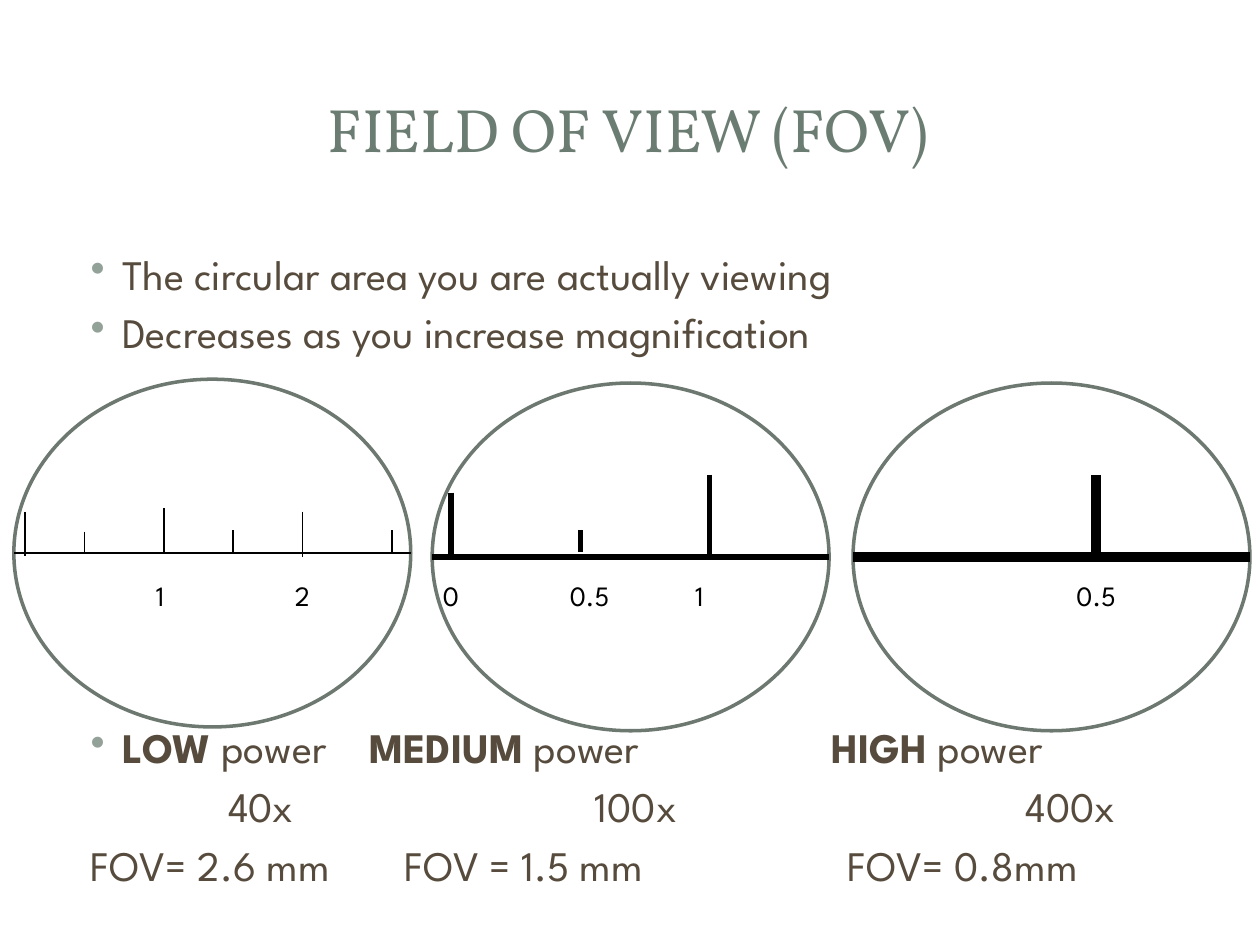
from lxml import etree
from pptx import Presentation
from pptx.dml.color import RGBColor
from pptx.enum.shapes import MSO_CONNECTOR, MSO_SHAPE
from pptx.enum.text import MSO_ANCHOR, PP_ALIGN
from pptx.oxml.ns import qn
from pptx.util import Inches, Pt

STRAIGHT = MSO_CONNECTOR.STRAIGHT
OVAL = MSO_SHAPE.OVAL
MIDDLE, TOP = MSO_ANCHOR.MIDDLE, MSO_ANCHOR.TOP
LEFT, CENTER = PP_ALIGN.LEFT, PP_ALIGN.CENTER

BODY_FONT, TITLE_FONT = "League Spartan", "Vollkorn"
BROWN, GREEN, BULLET, RING, BLACK, WHITE = (
    "564B3C", "6B7D72", "93A299", "6D7871", "000000", "FFFFFF")

TITLE = "FIELD OF VIEW (FOV)"
POINTS = ["The circular area you are actually viewing",
          "Decreases as you increase magnification"]
SCOPES = [
    {"left": 0.11, "top": 3.01, "axis": 4.39, "weight": 1,
     "ticks": [(0.2, 4.06, 4.41), (0.67, 4.22, 4.4), (1.3, 4.03, 4.39),
               (1.85, 4.21, 4.39), (2.4, 4.06, 4.42), (3.11, 4.21, 4.39)],
     "numbers": [("1", 1.27), ("2", 2.4)],
     "level": "LOW", "zoom": "40x", "fov": "FOV= 2.6 mm",
     "caption_left": 0.72, "indents": (0.25, 1.09, 0), "bullet": True},
    {"left": 3.43, "top": 3.04, "axis": 4.42, "weight": 3,
     "ticks": [(3.58, 3.91, 4.44), (4.61, 4.21, 4.38), (5.63, 3.77, 4.44)],
     "numbers": [("0", 3.58), ("0.5", 4.68), ("1", 5.55)],
     "level": "MEDIUM", "zoom": "100x", "fov": "FOV = 1.5 mm",
     "caption_left": 2.93, "indents": (0, 1.79, 0.28), "bullet": False},
    {"left": 6.77, "top": 3.04, "axis": 4.42, "weight": 6,
     "ticks": [(8.7, 3.77, 4.44)],
     "numbers": [("0.5", 8.7)],
     "level": "HIGH", "zoom": "400x", "fov": "FOV= 0.8mm",
     "caption_left": 6.6, "indents": (0, 1.54, 0.13), "bullet": False},
]
RING_W, RING_H = 3.15, 2.76
NUMBER_W, NUMBER_TOP, NUMBER_H = 0.6, 4.59, 0.27
BODY_LEFT, BODY_TOP, LINE_PITCH = 0.72, 1.97, 0.47
CAPTION_TOP = BODY_TOP + 8 * LINE_PITCH

prs = Presentation()
prs.slide_width, prs.slide_height = Inches(10), Inches(7.5)
s = prs.slides.add_slide(prs.slide_layouts[6])


def rgb(color):
    return RGBColor.from_string(color)


def set_indent(p, left, bullet):
    pPr = p._p.get_or_add_pPr()
    pPr.set("marL", str(Inches(left)))
    pPr.set("indent", str(-Inches(0.25) if bullet else 0))
    if bullet:
        clr = etree.SubElement(pPr, qn("a:buClr"))
        etree.SubElement(clr, qn("a:srgbClr"), val=BULLET)
        etree.SubElement(pPr, qn("a:buChar"), char="•")


def add_text(paragraphs, x, y, w, h, size=24, font=BODY_FONT, color=BROWN,
             align=LEFT, anchor=TOP, before=0, indents=None, bullets=()):
    tf = s.shapes.add_textbox(Inches(x), Inches(y), Inches(w), Inches(h)).text_frame
    tf.word_wrap = True
    tf.vertical_anchor = anchor
    tf.margin_left = tf.margin_right = tf.margin_top = tf.margin_bottom = 0
    for i, runs in enumerate(paragraphs):
        p = tf.paragraphs[0] if i == 0 else tf.add_paragraph()
        p.alignment = align
        p.space_before = Pt(before)
        if indents:
            set_indent(p, indents[i], i in bullets)
        for text, bold in runs:
            r = p.add_run()
            r.text = text
            r.font.size, r.font.name, r.font.bold = Pt(size), font, bold
            r.font.color.rgb = rgb(color)


def add_line(x1, y1, x2, y2, weight):
    line = s.shapes.add_connector(STRAIGHT, Inches(x1), Inches(y1), Inches(x2), Inches(y2))
    line.line.color.rgb = rgb(BLACK)
    line.line.width = Pt(weight)
    etree.SubElement(line._element.spPr, qn("a:effectLst"))


def add_scope(scope):
    left, axis, weight = scope["left"], scope["axis"], scope["weight"]
    sp = s.shapes.add_shape(OVAL, Inches(left), Inches(scope["top"]),
                            Inches(RING_W), Inches(RING_H))
    sp.shadow.inherit = False
    sp.fill.solid()
    sp.fill.fore_color.rgb = rgb(WHITE)
    sp.line.color.rgb = rgb(RING)
    sp.line.width = Pt(2)
    add_line(left, axis, left + RING_W, axis, weight)
    for x, top, bottom in scope["ticks"]:
        add_line(x, top, x, bottom, weight)
    for number, x in scope["numbers"]:
        add_text([[(number, False)]], x - NUMBER_W / 2, NUMBER_TOP, NUMBER_W, NUMBER_H,
                 size=16, color=BLACK, align=CENTER)
    caption = [[(scope["level"], True), (" power", False)],
               [(scope["zoom"], False)], [(scope["fov"], False)]]
    add_text(caption, scope["caption_left"], CAPTION_TOP, 2.8, 3 * LINE_PITCH, before=4.8,
             indents=scope["indents"], bullets=(0,) if scope["bullet"] else ())


add_text([[(TITLE, False)]], 0.47, 0.45, 9.03, 1.14, size=35, font=TITLE_FONT,
         color=GREEN, align=CENTER, anchor=MIDDLE)
add_text([[(point, False)] for point in POINTS], BODY_LEFT, BODY_TOP, 9.1, 2 * LINE_PITCH,
         before=4.8, indents=(0.25, 0.25), bullets=(0, 1))
for scope in SCOPES:
    add_scope(scope)

prs.save("out.pptx")
